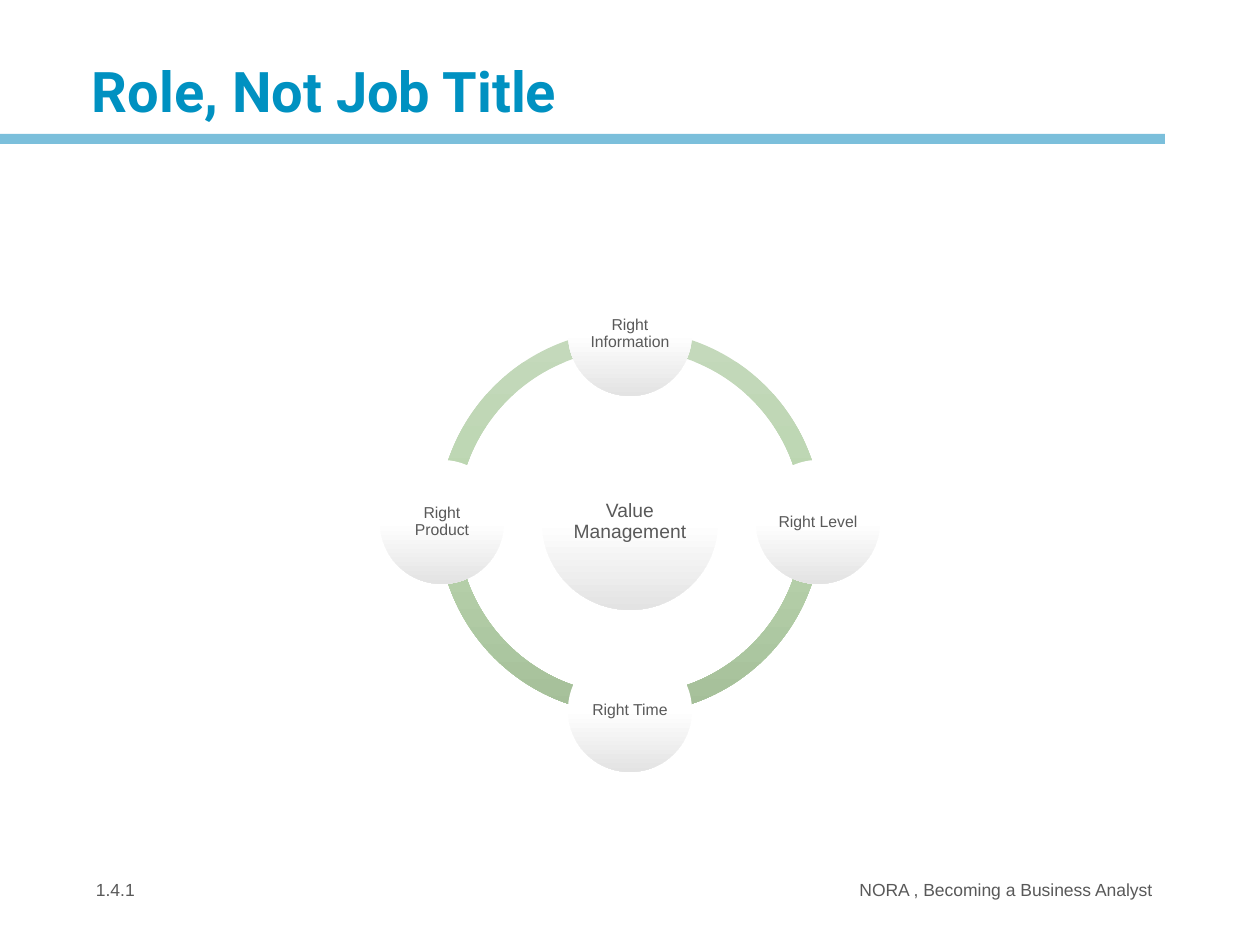
from copy import deepcopy
from pptx import Presentation
from pptx.dml.color import RGBColor
from pptx.enum.shapes import MSO_SHAPE
from pptx.enum.text import MSO_ANCHOR, PP_ALIGN
from pptx.oxml.ns import qn
from pptx.util import Pt

RECT, OVAL, ARC = MSO_SHAPE.RECTANGLE, MSO_SHAPE.OVAL, MSO_SHAPE.BLOCK_ARC
TOP, MIDDLE = MSO_ANCHOR.TOP, MSO_ANCHOR.MIDDLE
LEFT, CENTER, RIGHT = PP_ALIGN.LEFT, PP_ALIGN.CENTER, PP_ALIGN.RIGHT

BLUE = RGBColor(0x00, 0x91, 0xC1)
SKY = RGBColor(0x7B, 0xBF, 0xDB)
GRAY = RGBColor(0x59, 0x59, 0x59)
WHITE = RGBColor(0xFF, 0xFF, 0xFF)
SILVER = RGBColor(0xE3, 0xE3, 0xE3)
GREENS = (RGBColor(0xC4, 0xD9, 0xBB), RGBColor(0xBA, 0xD5, 0xAF),
          RGBColor(0xA5, 0xBF, 0x99))
PEARL = (WHITE, WHITE, SILVER)

TITLE = "Role, Not Job Title"
HUB = "Value Management"
NODES = [("Right Information", 0, -1), ("Right Level", 1, 0),
         ("Right Time", 0, 1), ("Right Product", -1, 0)]
FOOTERS = [("1.4.1", (83, 873, 251, 24), LEFT),
           ("NORA , Becoming a Business Analyst", (465, 873, 700, 34), RIGHT)]

MID_X, MID_Y = 630, 522
RING, ORBIT, HUB_SIZE, NODE_SIZE = 384, 188, 176, 124
QUARTER, BAND = 54, 0.05


def px(n):
    return round(n * 914400 / 126)


def put_text(shape, text, size, color=GRAY, font="Arial", bold=False,
             align=CENTER, anchor=MIDDLE, inset=(13, 6), line=None):
    frame = shape.text_frame
    frame.word_wrap = True
    frame.vertical_anchor = anchor
    frame.margin_left = frame.margin_right = px(inset[0])
    frame.margin_top = frame.margin_bottom = px(inset[1])
    para = frame.paragraphs[0]
    para.alignment, para.line_spacing = align, line
    run = para.add_run()
    run.text = text
    run.font.name, run.font.size, run.font.bold = font, Pt(size), bold
    run.font.color.rgb = color


def add_shape(slide, kind, x, y, w, h):
    shape = slide.shapes.add_shape(kind, px(x), px(y), px(w), px(h))
    shape.shadow.inherit = False
    shape.line.fill.background()
    return shape


def add_round(slide, kind, x, y, size, colors):
    shape = add_shape(slide, kind, x - size / 2, y - size / 2, size, size)
    shape.fill.gradient()
    shape.fill.gradient_angle = 270
    stops = shape._element.spPr.find(".//" + qn("a:gsLst"))
    stops.append(deepcopy(stops[-1]))
    for i, (stop, color) in enumerate(zip(shape.fill.gradient_stops, colors)):
        stop.position = i / 2
        stop.color.rgb = color
    return shape


def main():
    deck = Presentation()
    deck.slide_width, deck.slide_height = px(1260), px(945)
    slide = deck.slides.add_slide(deck.slide_layouts[5])

    bar = add_shape(slide, RECT, 0, 134, 1165, 10)
    bar.fill.solid()
    bar.fill.fore_color.rgb = SKY

    title = slide.shapes.title
    title.left, title.top, title.width, title.height = map(px, (83, 55, 1082, 78))
    put_text(title, TITLE, 32, color=BLUE, font="Roboto", bold=True,
             align=LEFT, inset=(9, 5), line=0.9)

    for i in range(4):
        arc = add_round(slide, ARC, MID_X, MID_Y, RING, GREENS)
        arc.adjustments[0] = i * QUARTER
        arc.adjustments[1] = (i + 1) % 4 * QUARTER
        arc.adjustments[2] = BAND

    hub = add_round(slide, OVAL, MID_X, MID_Y, HUB_SIZE, PEARL)
    put_text(hub, HUB, 11, inset=(2, 2), line=0.9)
    for text, dx, dy in NODES:
        node = add_round(slide, OVAL, MID_X + dx * ORBIT, MID_Y + dy * ORBIT,
                         NODE_SIZE, PEARL)
        put_text(node, text, 9, inset=(1, 1), line=0.9)

    for text, spot, align in FOOTERS:
        box = slide.shapes.add_textbox(*map(px, spot))
        put_text(box, text, 10, align=align, anchor=TOP)

    deck.save("out.pptx")


if __name__ == "__main__":
    main()
